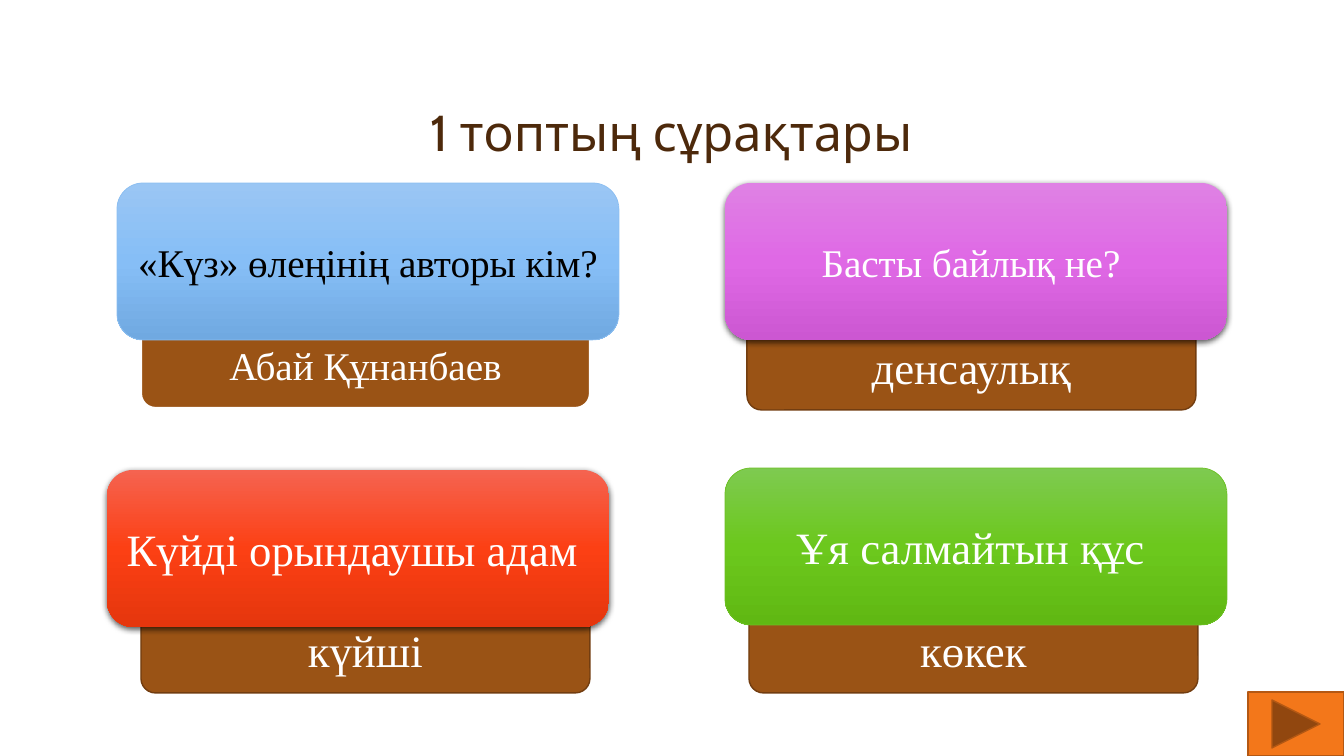
from copy import deepcopy

from lxml import etree
from pptx import Presentation
from pptx.dml.color import RGBColor
from pptx.enum.shapes import MSO_SHAPE
from pptx.enum.text import MSO_ANCHOR, PP_ALIGN
from pptx.oxml.ns import qn
from pptx.util import Pt

ROUNDED = MSO_SHAPE.ROUNDED_RECTANGLE
NEXT_BUTTON = MSO_SHAPE.ACTION_BUTTON_FORWARD_OR_NEXT
CENTER = PP_ALIGN.CENTER
MIDDLE = MSO_ANCHOR.MIDDLE
BOTTOM = MSO_ANCHOR.BOTTOM

WHITE = RGBColor(0xFF, 0xFF, 0xFF)
BLACK = RGBColor(0x00, 0x00, 0x00)
TITLE_BROWN = RGBColor(0x4D, 0x29, 0x0B)
BROWN = RGBColor(0x9A, 0x53, 0x15)
DARK_BROWN = RGBColor(0x72, 0x3D, 0x10)
ORANGE = RGBColor(0xF3, 0x77, 0x1A)
DARK_ORANGE = RGBColor(0xB4, 0x58, 0x13)
BLUE_LINE = RGBColor(0x8B, 0xBE, 0xF1)
GREEN_LINE = RGBColor(0x6D, 0xC0, 0x25)
BLUES = [RGBColor(0x9A, 0xC6, 0xF4), RGBColor(0x86, 0xBE, 0xF6), RGBColor(0x70, 0xA9, 0xE1)]
PINKS = [RGBColor(0xDF, 0x81, 0xE4), RGBColor(0xDF, 0x69, 0xE5), RGBColor(0xCC, 0x57, 0xD2)]
REDS = [RGBColor(0xF5, 0x63, 0x50), RGBColor(0xFC, 0x40, 0x14), RGBColor(0xE5, 0x36, 0x0D)]
GREENS = [RGBColor(0x7E, 0xCA, 0x50), RGBColor(0x6C, 0xC8, 0x1D), RGBColor(0x60, 0xB8, 0x13)]

PX = 12192000 / 1344


def add_block(preset, left, top, width, height):
    block = page.shapes.add_shape(preset, *[round(n * PX) for n in (left, top, width, height)])
    block.shadow.inherit = False
    return block


def write_text(box, text, font_name, size, color, anchor):
    frame = box.text_frame
    frame.word_wrap = True
    frame.vertical_anchor = anchor
    frame.text = text
    para = frame.paragraphs[0]
    para.alignment = CENTER
    span = para.runs[0]
    span.font.name = font_name
    span.font.size = Pt(size)
    span.font.color.rgb = color
    return para


deck = Presentation()
deck.slide_width = round(1344 * PX)
deck.slide_height = round(756 * PX)
page = deck.slides.add_slide(deck.slide_layouts[6])

answers = [
    ("Абай Құнанбаев", 141, 321, 28, WHITE, 1.5),
    ("денсаулық", 747, 323, 32, DARK_BROWN, 1),
    ("күйші", 141, 606, 32, DARK_BROWN, 1),
    ("көкек", 749, 606, 32, DARK_BROWN, 1),
]
for text, left, top, size, line_color, line_width in answers:
    answer = add_block(ROUNDED, left, top, 449, 87)
    answer.fill.solid()
    answer.fill.fore_color.rgb = BROWN
    answer.line.color.rgb = line_color
    answer.line.width = Pt(line_width)
    write_text(answer, text, "Times New Roman", size, WHITE, MIDDLE)

title = page.shapes.add_textbox(*[round(n * PX) for n in (117, 33, 1109, 134)])
heading = write_text(title, "1 топтың сұрақтары", "Cabin", 36, TITLE_BROWN, BOTTOM)
heading.line_spacing = 0.9

questions = [
    ("«Күз» өлеңінің авторы кім? ", 117, 183, 28, BLACK, BLUES, BLUE_LINE),
    ("Басты байлық не? ", 725, 183, 28, WHITE, PINKS, None),
    ("Күйді орындаушы адам ", 107, 470, 32, WHITE, REDS, None),
    ("Ұя салмайтын құс ", 725, 468, 32, WHITE, GREENS, GREEN_LINE),
]
for text, left, top, size, text_color, shades, line_color in questions:
    question = add_block(ROUNDED, left, top, 502, 157)
    question.fill.gradient()
    question.fill.gradient_angle = 270
    stop_list = question.element.spPr.find(qn("a:gradFill")).find(qn("a:gsLst"))
    stop_list.append(deepcopy(stop_list[0]))
    for stop, position, shade in zip(question.fill.gradient_stops, (0, 0.5, 1), shades):
        stop.position = position
        stop.color.rgb = shade
    if line_color:
        question.line.color.rgb = line_color
        question.line.width = Pt(0.5)
    else:
        question.line.fill.background()
        effects = question.element.spPr.find(qn("a:effectLst"))
        shadow = etree.SubElement(effects, qn("a:outerShdw"), blurRad=str(Pt(4.5)),
                                  dist=str(Pt(1.5)), dir="5400000", rotWithShape="0")
        shadow_color = etree.SubElement(shadow, qn("a:srgbClr"), val=str(BLACK))
        etree.SubElement(shadow_color, qn("a:alpha"), val="63000")
    write_text(question, text, "Times New Roman", size, text_color, MIDDLE)

button = add_block(NEXT_BUTTON, 1248, 692, 96, 64)
button.fill.solid()
button.fill.fore_color.rgb = ORANGE
button.line.color.rgb = DARK_ORANGE
button.line.width = Pt(1)

deck.save("out.pptx")
